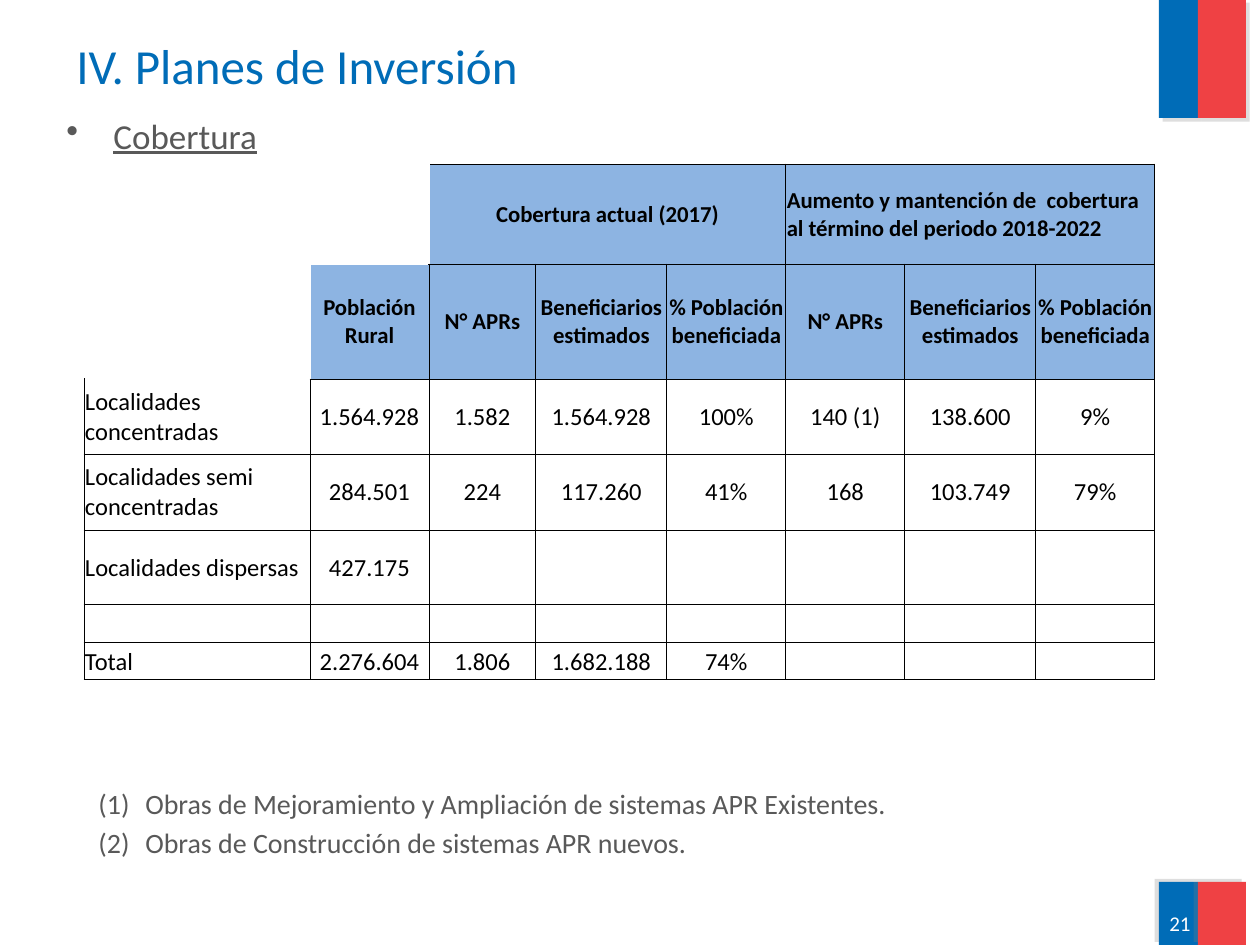
import pptx
import pptx.util
import pptx.dml.color
import pptx.enum.shapes
import pptx.enum.text
from lxml import etree

A = "http://schemas.openxmlformats.org/drawingml/2006/main"
ALIGN = pptx.enum.text.PP_ALIGN
MIDDLE = pptx.enum.text.MSO_ANCHOR.MIDDLE
TOP = pptx.enum.text.MSO_ANCHOR.TOP
BLUE, RED, GREY, HEADER = "006CB7", "EF4144", "595959", "8DB4E2"


def px(n):
    return pptx.util.Emu(round(n * 914400 / 126))


def write(p, text, color, align, **font):
    """Add one run to a paragraph; an empty text only sets the line's size."""
    p.alignment = align
    if not text:
        p._p.get_or_add_endParaRPr().set("sz", str(font["size"] * 100))
        return
    r = p.add_run()
    r.text = text
    r.font.color.rgb = pptx.dml.color.RGBColor.from_string(color)
    font["size"] = pptx.util.Pt(font["size"])
    for name, value in {"name": "Calibri", **font}.items():
        setattr(r.font, name, value)


prs = pptx.Presentation()
prs.slide_width, prs.slide_height = px(1260), px(945)
s = prs.slides.add_slide(prs.slide_layouts[6])

# Two-colour bands in the right corners, each with a hard shadow
for top, height, angle in [(-1, 119, 45), (882, 63, 215)]:
    for left, width, color in [(1159, 39, BLUE), (1198, 48, RED)]:
        sp = s.shapes.add_shape(pptx.enum.shapes.MSO_SHAPE.RECTANGLE,
                                px(left), px(top), px(width), px(height))
        sp.fill.solid()
        sp.fill.fore_color.rgb = pptx.dml.color.RGBColor.from_string(color)
        sp.line.fill.background()
        sp._element.spPr.append(etree.fromstring(
            f'<a:effectLst xmlns:a="{A}"><a:outerShdw blurRad="0" dist="38100" '
            f'dir="{angle * 60000}" algn="ctr" rotWithShape="0"><a:srgbClr val="808080">'
            '<a:alpha val="25000"/></a:srgbClr></a:outerShdw></a:effectLst>'))

# Text boxes: position, anchor, bullet, paragraphs, alignment, font
BULLET = '<a:buChar xmlns:a="%s" char="•"/>' % A
NUMBER = '<a:buAutoNum xmlns:a="%s" type="arabicParenBoth"/>' % A
notes = ["Obras de Mejoramiento y Ampliación de sistemas APR Existentes.",
         "Obras de Construcción de sistemas APR nuevos."]
for box, anchor, bullet, lines, align, color, font in [
    ((1137, 898, 66, 50), MIDDLE, None, ["21"], ALIGN.RIGHT, "FFFFFF", {"size": 12}),
    ((64, 6, 1071, 118), MIDDLE, None, ["IV. Planes de Inversión"], ALIGN.LEFT, BLUE,
     {"size": 28}),
    ((86, 780, 1134, 277), TOP, NUMBER, notes, ALIGN.JUSTIFY, GREY, {"size": 16}),
    ((54, 108, 1134, 674), TOP, BULLET, ["Cobertura"], ALIGN.JUSTIFY, GREY,
     {"size": 20, "underline": True}),
]:
    tf = s.shapes.add_textbox(*map(px, box)).text_frame
    tf.word_wrap = True
    tf.vertical_anchor = anchor
    for i, line in enumerate(lines):
        p = tf.add_paragraph() if i else tf.paragraphs[0]
        write(p, line, color, align, **font)
        if bullet:
            pPr = p._p.get_or_add_pPr()
            pPr.set("marL", str(px(47)))
            pPr.set("indent", str(-px(47)))
            pPr.append(etree.fromstring(
                f'<a:spcBef xmlns:a="{A}"><a:spcPct val="20000"/></a:spcBef>'))
            pPr.append(etree.fromstring(bullet))

# Coverage table
group = ["N° APRs", "Beneficiarios estimados", "% Población beneficiada"]
rows = [
    ["", "", "Cobertura actual (2017)", "", "",
     "Aumento y mantención de  cobertura al término del periodo 2018-2022", "", ""],
    ["", "Población Rural"] + group * 2,
    ["Localidades concentradas", "1.564.928", "1.582", "1.564.928", "100%",
     "140 (1)", "138.600", "9%"],
    ["Localidades semi concentradas", "284.501", "224", "117.260", "41%",
     "168", "103.749", "79%"],
    ["Localidades dispersas", "427.175"] + [""] * 6,
    [""] * 8,
    ["Total", "2.276.604", "1.806", "1.682.188", "74%", "", "", ""],
]
widths = [226, 119, 107, 131, 119, 119, 131, 119]
heights = [100, 115, 75, 76, 75, 38, 37]
table = s.shapes.add_table(len(rows), len(widths), px(84), px(164),
                           px(sum(widths)), px(sum(heights))).table
table.first_row = table.horz_banding = False
for column, width in zip(table.columns, widths):
    column.width = px(width)
for row, height in zip(table.rows, heights):
    row.height = px(height)
for first in (2, 5):
    table.cell(0, first).merge(table.cell(0, first + 2))

for i, row in enumerate(rows):
    for j, text in enumerate(row):
        cell = table.cell(i, j)
        header = i < 2
        blank = header and j < 2 - i
        for name, value in {"margin_left": px(1), "margin_right": px(1),
                            "margin_top": px(1), "margin_bottom": 0,
                            "vertical_anchor": MIDDLE}.items():
            setattr(cell, name, value)
        left = j == 0 or (i, j) == (0, 5)
        write(cell.text_frame.paragraphs[0], text, "000000",
              ALIGN.LEFT if left else ALIGN.CENTER,
              size=13 if header else 14, bold=header)
        if not blank:
            for side in "LRTB":
                cell._tc.get_or_add_tcPr().append(etree.fromstring(
                    f'<a:ln{side} xmlns:a="{A}" w="6350"><a:solidFill>'
                    f'<a:srgbClr val="000000"/></a:solidFill></a:ln{side}>'))
        if header and not blank:
            cell.fill.solid()
            cell.fill.fore_color.rgb = pptx.dml.color.RGBColor.from_string(HEADER)
        else:
            cell.fill.background()

prs.save("out.pptx")
